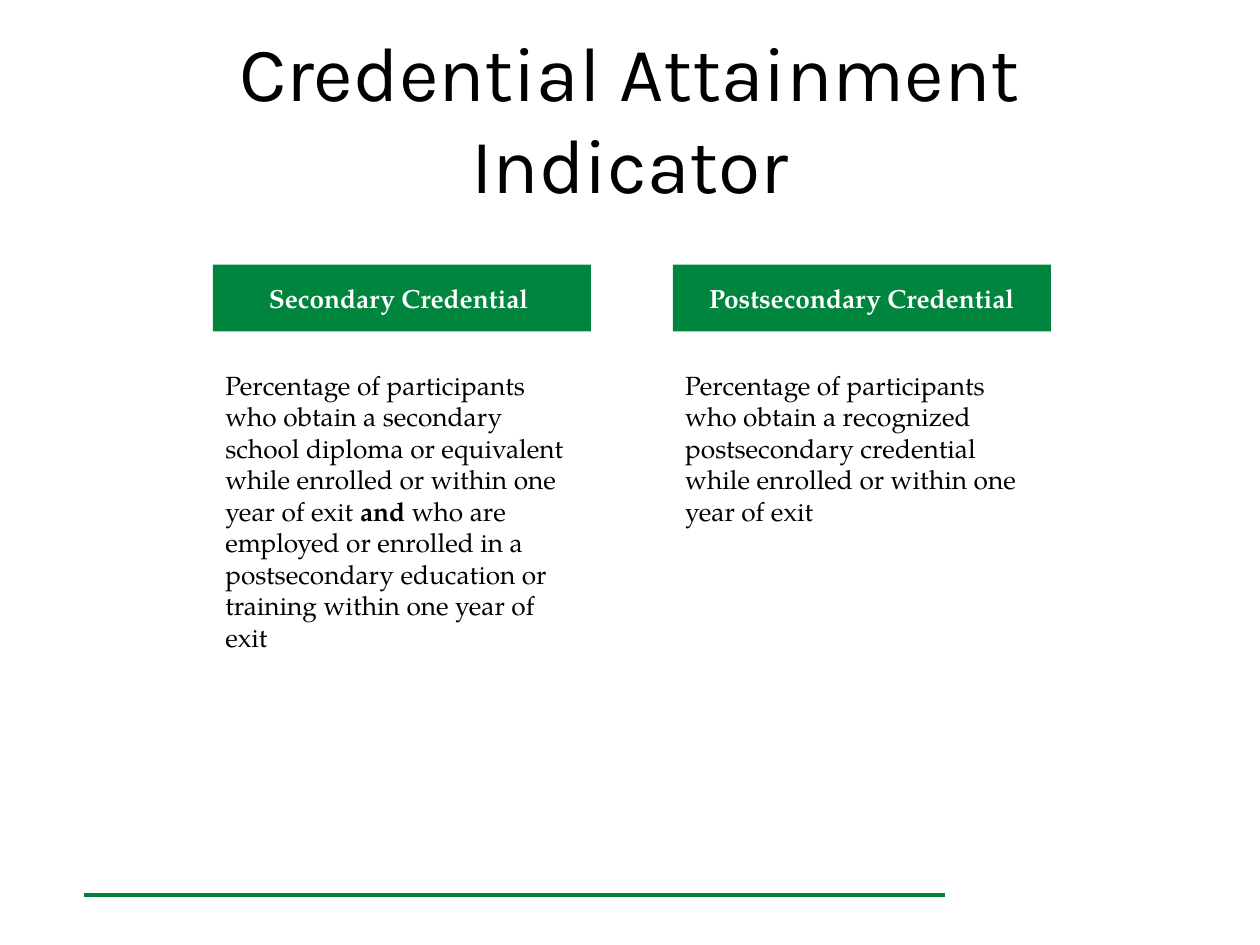
"""Build the Credential Attainment Indicator slide."""
from dataclasses import dataclass

from lxml import etree
from pptx import Presentation
from pptx.dml.color import RGBColor
from pptx.enum.shapes import MSO_CONNECTOR, MSO_SHAPE
from pptx.enum.text import MSO_ANCHOR, MSO_AUTO_SIZE, PP_ALIGN
from pptx.oxml.ns import qn
from pptx.util import Inches, Pt

LEFT, CENTER = PP_ALIGN.LEFT, PP_ALIGN.CENTER
TOP, MIDDLE = MSO_ANCHOR.TOP, MSO_ANCHOR.MIDDLE
NO_FIT, GROW = MSO_AUTO_SIZE.NONE, MSO_AUTO_SIZE.SHAPE_TO_FIT_TEXT
RECT, STRAIGHT = MSO_SHAPE.RECTANGLE, MSO_CONNECTOR.STRAIGHT


@dataclass(frozen=True)
class Theme:
    green: RGBColor = RGBColor(0x00, 0x85, 0x3F)
    rule: RGBColor = RGBColor(0x00, 0x82, 0x3E)
    black: RGBColor = RGBColor(0, 0, 0)
    white: RGBColor = RGBColor(255, 255, 255)
    head: str = "Karla"
    body: str = "TeX Gyre Pagella"
    big: int = 44
    small: int = 15


theme = Theme()


def write(shape, *parts, font=theme.body, size=theme.small, color=theme.black,
          bold=(), align=LEFT, anchor=TOP, fit=NO_FIT):
    """Fill a shape with runs; bold lists the positions of the bold ones."""
    frame = shape.text_frame
    frame.word_wrap = True
    frame.auto_size = fit
    frame.vertical_anchor = anchor
    para = frame.paragraphs[0]
    para.alignment = align
    for i, part in enumerate(parts):
        run = para.add_run()
        run.text = part
        run.font.name = font
        run.font.size = Pt(size)
        run.font.bold = i in bold
        run.font.color.rgb = color


def block(left, top, high, fill):
    """Add a plain filled box of column width."""
    box = slide.shapes.add_shape(RECT, Inches(left), Inches(top), Inches(3), Inches(high))
    box.shadow.inherit = False
    box.fill.solid()
    box.fill.fore_color.rgb = fill
    box.line.fill.background()
    return box


deck = Presentation()
deck.slide_width, deck.slide_height = Inches(10), Inches(7.5)
slide = deck.slides.add_slide(deck.slide_layouts[5])

rule = slide.shapes.add_connector(STRAIGHT, Inches(0.67), Inches(7.1), Inches(7.5), Inches(7.1))
rule.line.color.rgb = theme.rule
rule.line.width = Pt(2.25)
etree.SubElement(rule._element.spPr, qn("a:effectLst"))

title = slide.shapes.title
title.left, title.top = Inches(0.5), Inches(0.3)
title.width, title.height = Inches(9), Inches(1.25)
write(title, "Credential Attainment Indicator", font=theme.head, size=theme.big,
      align=CENTER, anchor=MIDDLE)

columns = [
    (1.69, "Secondary Credential ", 2.37, [
        "Percentage of participants who obtain a secondary school diploma or "
        "equivalent while enrolled or within one year of exit ",
        "and ",
        "who are employed or enrolled in a postsecondary education or training "
        "within one year of exit"]),
    (5.34, "Postsecondary Credential", 1.36, [
        "Percentage of participants who obtain a recognized postsecondary "
        "credential while enrolled or within one year of exit"]),
]
for left, label, high, parts in columns:
    write(block(left, 2.1, 0.53, theme.green), label, color=theme.white,
          bold=(0,), align=CENTER, anchor=MIDDLE)
    write(block(left, 2.88, high, theme.white), *parts, bold=(1,), fit=GROW)

deck.save("out.pptx")
